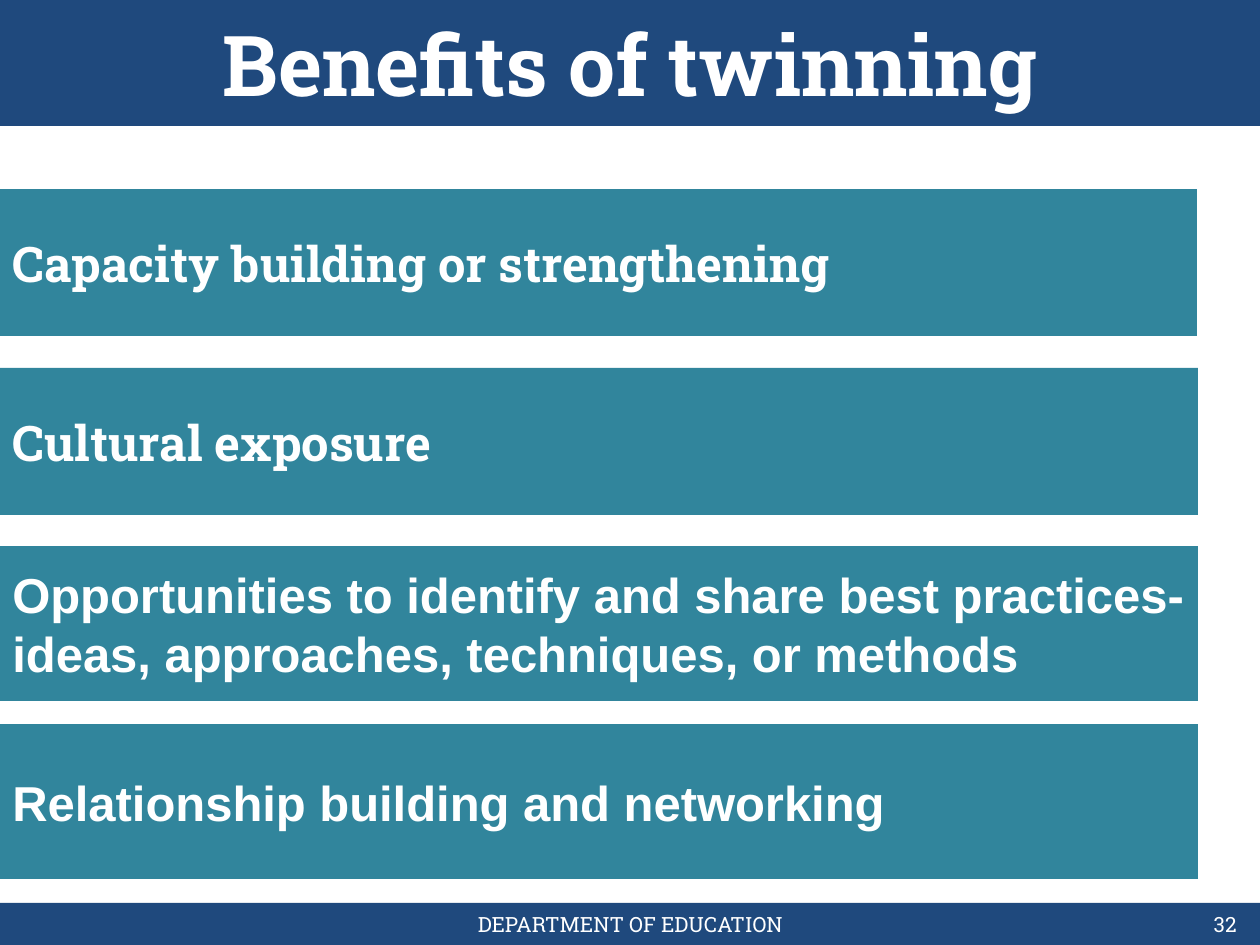
"""Build the "Benefits of twinning" slide."""
from dataclasses import dataclass

from pptx import Presentation
from pptx import util as u
from pptx.dml.color import RGBColor
from pptx.enum import shapes, text

EMU_PER_PX = 914400 / 126
WIDTH, HEIGHT = 1260, 945
HEADER_H, FOOTER_H = 126, 42
FOOTER_Y = HEIGHT - FOOTER_H
BENEFIT_Y, BENEFIT_PITCH = 189, 178.5


@dataclass(frozen=True)
class Theme:
    navy: str = "1F497D"
    teal: str = "31859C"
    white: str = "FFFFFF"
    slab: str = "Roboto Slab"
    sans: str = "Arial"
    title: int = 48
    benefit: int = 28
    small: int = 12


THEME = Theme()


def px(*lengths):
    return [u.Emu(round(n * EMU_PER_PX)) for n in lengths]


def write(tf, content, *, size, font=THEME.slab, color=THEME.white,
          bold=False, align=text.PP_ALIGN.LEFT):
    tf.word_wrap = True
    tf.auto_size = text.MSO_AUTO_SIZE.NONE
    tf.vertical_anchor = text.MSO_ANCHOR.MIDDLE
    p = tf.paragraphs[0]
    p.alignment = align
    r = p.add_run()
    r.text = content
    r.font.name, r.font.size, r.font.bold = font, u.Pt(size), bold
    r.font.color.rgb = RGBColor.from_string(color)


class Deck:
    def __init__(self, theme):
        self.theme = theme
        self.prs = Presentation()
        self.prs.slide_width, self.prs.slide_height = px(WIDTH, HEIGHT)
        self.s = self.prs.slides.add_slide(self.prs.slide_layouts[5])

    def band(self, box, fill):
        sp = self.s.shapes.add_shape(shapes.MSO_SHAPE.RECTANGLE, *px(*box))
        sp.shadow.inherit = False
        sp.fill.solid()
        sp.fill.fore_color.rgb = RGBColor.from_string(fill)
        sp.line.fill.background()
        return sp

    def title(self, box, content):
        sp = self.s.shapes.title
        sp.left, sp.top, sp.width, sp.height = px(*box)
        write(sp.text_frame, content, size=self.theme.title, bold=True,
              align=text.PP_ALIGN.CENTER)
        self.s.shapes._spTree.append(sp._element)

    def benefit(self, box, content, font):
        sp = self.band(box, self.theme.teal)
        write(sp.text_frame, content, size=self.theme.benefit, font=font, bold=True)

    def label(self, box, content, align):
        sp = self.s.shapes.add_textbox(*px(*box))
        write(sp.text_frame, content, size=self.theme.small, align=align)


def main():
    deck = Deck(THEME)
    deck.band((0, FOOTER_Y, WIDTH, FOOTER_H), THEME.navy)
    deck.band((0, 0, WIDTH, HEADER_H), THEME.navy)
    deck.label((431, FOOTER_Y, 399, FOOTER_H), "DEPARTMENT OF EDUCATION",
               text.PP_ALIGN.CENTER)
    deck.title((63, 0, 1134, HEADER_H), "Benefits of twinning")

    benefits = [
        ("Capacity building or strengthening", THEME.slab, 1197, 147),
        ("Cultural exposure", THEME.slab, 1198, 147),
        ("Opportunities to identify and share best practices- "
         "ideas, approaches, techniques, or methods", THEME.sans, 1198, 155),
        ("Relationship building and networking", THEME.sans, 1198, 155),
    ]
    for i, (content, font, width, height) in enumerate(benefits):
        top = round(BENEFIT_Y + i * BENEFIT_PITCH)
        deck.benefit((0, top, width, height), content, font)

    deck.label((955, FOOTER_Y, 294, FOOTER_H), "32", text.PP_ALIGN.RIGHT)
    deck.prs.save("out.pptx")


if __name__ == "__main__":
    main()
